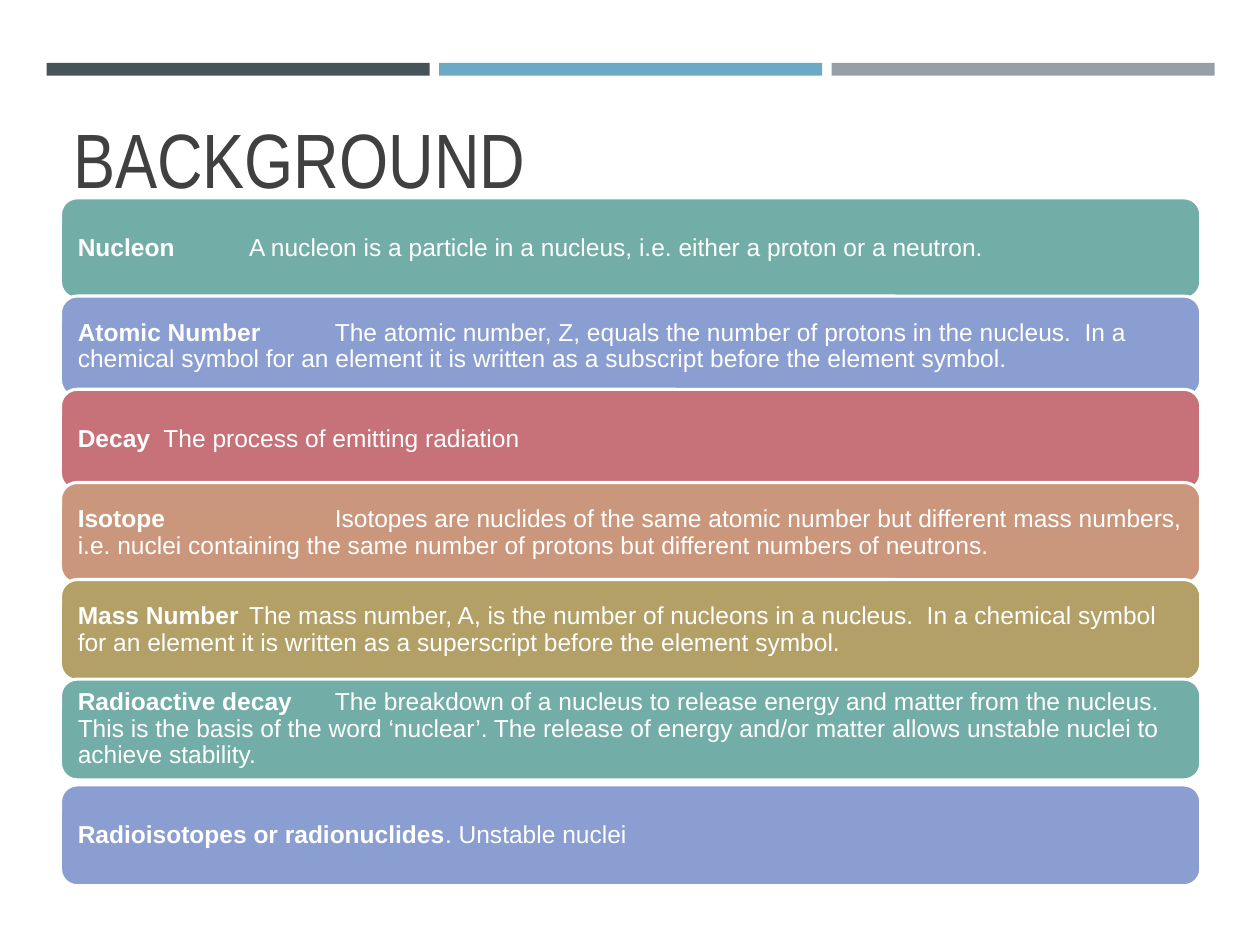
import pptx
import pptx.dml.color
import pptx.enum.shapes
import pptx.enum.text
import pptx.oxml.ns
import pptx.util
from lxml import etree

Inches = pptx.util.Inches
Pt = pptx.util.Pt
ALIGN = pptx.enum.text.PP_ALIGN
ANCHOR = pptx.enum.text.MSO_ANCHOR
SHAPES = pptx.enum.shapes.MSO_SHAPE

COLOURS = {
    "slate": "465359", "sky": "6BA9C5", "grey": "969FA7",
    "teal": "73ADA7", "blue": "8B9ED1", "red": "C77178",
    "orange": "CB977C", "olive": "B3A066",
    "title": "404040", "white": "FFFFFF",
}
TITLE_FONT = {"name": "Arial Narrow", "size": Pt(44), "bold": False}
CARD_FONT = {"name": "Arial", "size": Pt(14)}
CARD_FRAME = {
    "word_wrap": True, "vertical_anchor": ANCHOR.MIDDLE,
    "margin_left": Inches(0.1), "margin_right": Inches(0.1),
    "margin_top": Inches(0.1), "margin_bottom": Inches(0.1),
}
TITLE_FRAME = {
    "word_wrap": True, "vertical_anchor": ANCHOR.BOTTOM,
    "auto_size": pptx.enum.text.MSO_AUTO_SIZE.NONE,
}
PARAGRAPH = {"alignment": ALIGN.LEFT, "line_spacing": 0.9}

TAB_STEP = 0.68
CARD_LEFT, CARD_WIDTH, CARD_HEIGHT = 0.48, 9.05, 0.8

# Top, colour, tab stop in steps, term, definition
CARDS = [
    (1.57, "teal", 2, "Nucleon",
     "\tA nucleon is a particle in a nucleus, i.e. either a proton or a neutron."),
    (2.35, "blue", 3, "Atomic Number",
     "\tThe atomic number, Z, equals the number of protons in the nucleus.  "
     "In a chemical symbol for an element it is written as a subscript "
     "before the element symbol."),
    (3.09, "red", 1, "Decay", " \tThe process of emitting radiation"),
    (3.83, "orange", 3, "Isotope",
     "\tIsotopes are nuclides of the same atomic number but different mass "
     "numbers, i.e. nuclei containing the same number of protons but "
     "different numbers of neutrons."),
    (4.6, "olive", 2, "Mass Number",
     "\tThe mass number, A, is the number of nucleons in a nucleus.  "
     "In a chemical symbol for an element it is written as a superscript "
     "before the element symbol."),
    (5.39, "teal", 3, "Radioactive decay",
     " \tThe breakdown of a nucleus to release energy and matter from the "
     "nucleus. This is the basis of the word ‘nuclear’. The release of energy "
     "and/or matter allows unstable nuclei to achieve stability."),
    (6.23, "blue", 0, "Radioisotopes or radionuclides", ". Unstable nuclei"),
]


def apply(target, values):
    for name, value in values.items():
        setattr(target, name, value)


def colour(name):
    return pptx.dml.color.RGBColor.from_string(COLOURS[name])


def add_span(para, text, font, colour_name, **extra):
    span = para.add_run()
    span.text = text
    apply(span.font, {**font, **extra})
    span.font.color.rgb = colour(colour_name)


def add_tab_stop(para, position):
    properties = para._p.get_or_add_pPr()
    name = pptx.oxml.ns.qn
    stops = etree.SubElement(properties, name("a:tabLst"))
    etree.SubElement(stops, name("a:tab"), pos=str(Inches(position)), algn="l")


def add_block(page, kind, left, top, width, height, fill):
    box = page.shapes.add_shape(
        kind, Inches(left), Inches(top), Inches(width), Inches(height))
    box.shadow.inherit = False
    box.fill.solid()
    box.fill.fore_color.rgb = colour(fill)
    box.line.fill.background()
    return box


def add_title(page, text):
    box = page.shapes.title
    apply(box, {"left": Inches(0.48), "top": Inches(0.77),
                "width": Inches(9.05), "height": Inches(0.91)})
    apply(box.text_frame, TITLE_FRAME)
    para = box.text_frame.paragraphs[0]
    apply(para, PARAGRAPH)
    add_span(para, text, TITLE_FONT, "title")


def add_card(page, top, fill, tab_steps, term, definition):
    box = add_block(page, SHAPES.ROUNDED_RECTANGLE,
                    CARD_LEFT, top, CARD_WIDTH, CARD_HEIGHT, fill)
    box.line.color.rgb = colour("white")
    box.line.width = Pt(1.75)
    apply(box.text_frame, CARD_FRAME)
    para = box.text_frame.paragraphs[0]
    if tab_steps:
        add_tab_stop(para, tab_steps * TAB_STEP)
    apply(para, PARAGRAPH)
    add_span(para, term, CARD_FONT, "white", bold=True)
    add_span(para, definition, CARD_FONT, "white", bold=False)


def main():
    deck = pptx.Presentation()
    deck.slide_width, deck.slide_height = Inches(10), Inches(7.5)
    page = deck.slides.add_slide(deck.slide_layouts[5])

    # Bars across the top
    for index, fill in enumerate(("slate", "sky", "grey")):
        add_block(page, SHAPES.RECTANGLE,
                  0.37 + index * 3.115, 0.5, 3.04, 0.1, fill)

    # Title and definition cards
    add_title(page, "BACKGROUND")
    for card in CARDS:
        add_card(page, *card)

    deck.save("out.pptx")


if __name__ == "__main__":
    main()
